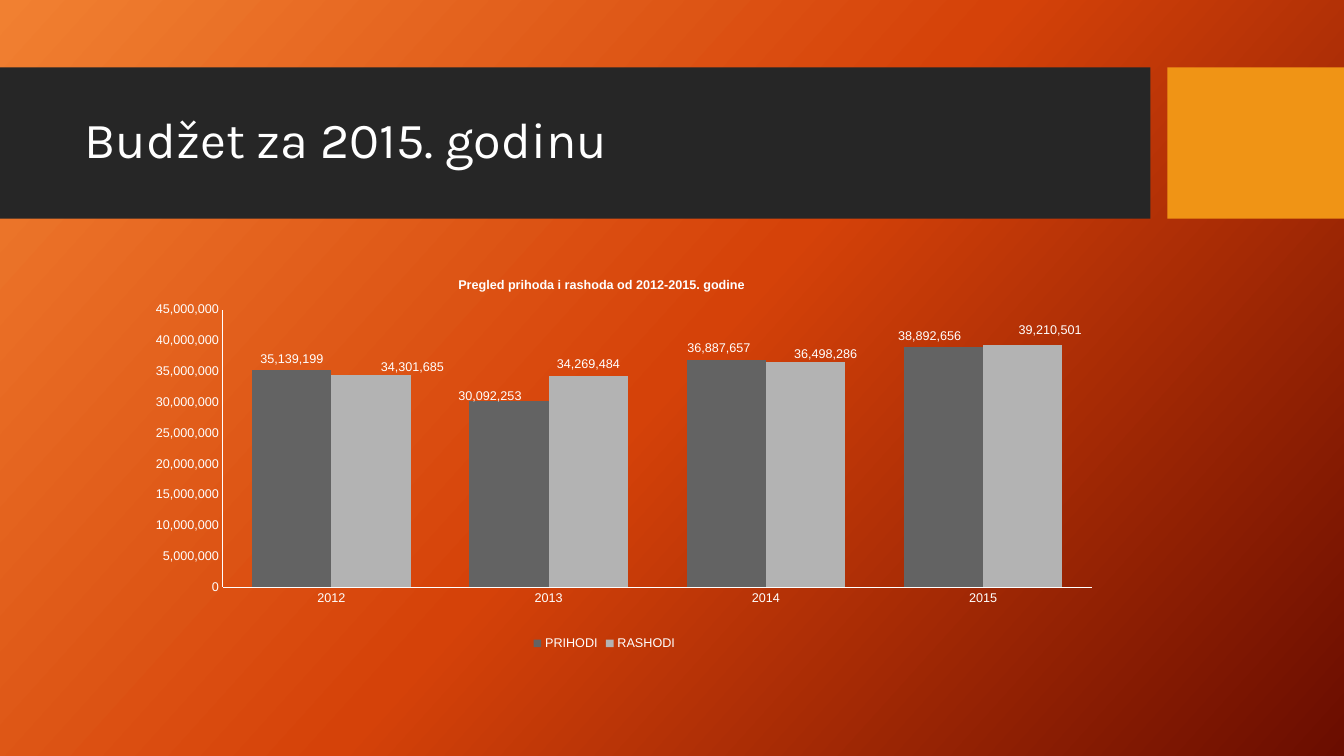
import copy
from dataclasses import dataclass

import pptx
import pptx.chart.data
import pptx.dml.color
import pptx.enum.chart
import pptx.enum.shapes
import pptx.enum.text
import pptx.oxml
import pptx.oxml.ns
import pptx.util
from pptx.util import Cm


@dataclass(frozen=True)
class Theme:
    band: str = "262626"
    accent: str = "F09415"
    text: str = "FFFFFF"
    income: str = "636363"
    expenses: str = "B3B3B3"
    backdrop: tuple = ((0, "F18031"), (0.5, "D54209"), (1, "6A0D00"))
    title_font: str = "Karla"
    chart_font: str = "Arial"
    title_size: int = 36
    chart_size: int = 9


THEME = Theme()
YEARS = ("2012", "2013", "2014", "2015")
# Each series: name, colour, values, label shifts by year (% of chart width and height)
BUDGET = (
    ("PRIHODI", THEME.income, (35139199, 30092253, 36887657, 38892656),
     {1: (-1.8, 1.5), 2: (-0.7, 0), 3: (-1.3, 0)}),
    ("RASHODI", THEME.expenses, (34301685, 34269484, 36498286, 39210501),
     {0: (3.9, 0.8), 2: (1.9, 0.8), 3: (2.6, -0.8)}),
)


def rgb(value):
    return pptx.dml.color.RGBColor.from_string(value)


def style_font(font, name, size, bold=False):
    font.name = name
    font.size = pptx.util.Pt(size)
    font.bold = bold
    font.color.rgb = rgb(THEME.text)


def style_chart_font(font, bold=False):
    style_font(font, THEME.chart_font, THEME.chart_size, bold)


def set_layout(parent, index, **settings):
    """Give a chart part a manual layout; settings come in schema order."""
    for old in parent.findall(pptx.oxml.ns.qn("c:layout")):
        parent.remove(old)
    parts = "".join(f'<c:{key} val="{value}"/>' for key, value in settings.items())
    parent.insert(index, pptx.oxml.parse_xml(
        f'<c:layout {pptx.oxml.ns.nsdecls("c")}>'
        f"<c:manualLayout>{parts}</c:manualLayout></c:layout>"))


def paint_background(slide):
    fill = slide.background.fill
    fill.gradient()
    fill.gradient_angle = 360 - 42
    stop_list = slide.element.find(".//" + pptx.oxml.ns.qn("a:gsLst"))
    stop_list.append(copy.deepcopy(stop_list[-1]))
    for stop, (position, color) in zip(fill.gradient_stops, THEME.backdrop):
        stop.position = position
        stop.color.rgb = rgb(color)


def add_header(slide, left, top, width, height):
    # Dark band and accent block, behind the title
    title = slide.shapes.title
    accent_width, gap = Cm(4.45), Cm(0.43)
    band_width = width - accent_width - gap
    for x, block_width, color in ((left, band_width, THEME.band),
                                  (left + width - accent_width, accent_width, THEME.accent)):
        block = slide.shapes.add_shape(pptx.enum.shapes.MSO_SHAPE.RECTANGLE,
                                       x, top, block_width, height)
        block.shadow.inherit = False
        block.fill.solid()
        block.fill.fore_color.rgb = rgb(color)
        block.line.fill.background()
        title.element.addprevious(block.element)

    # Title
    title.left, title.top = left + Cm(1.88), top + Cm(0.38)
    title.width, title.height = Cm(26.7), Cm(3)
    frame = title.text_frame
    frame.word_wrap = True
    frame.auto_size = pptx.enum.text.MSO_AUTO_SIZE.NONE
    frame.vertical_anchor = pptx.enum.text.MSO_ANCHOR.MIDDLE
    heading = frame.paragraphs[0]
    heading.alignment = pptx.enum.text.PP_ALIGN.LEFT
    heading.line_spacing = 0.9
    run = heading.add_run()
    run.text = "Budžet za 2015. godinu"
    style_font(run.font, THEME.title_font, THEME.title_size)


def style_axis(axis):
    axis.has_major_gridlines = False
    axis.major_tick_mark = axis.minor_tick_mark = pptx.enum.chart.XL_TICK_MARK.NONE
    axis.format.line.color.rgb = rgb(THEME.text)
    axis.format.line.width = pptx.util.Pt(0.75)
    style_chart_font(axis.tick_labels.font)


def style_series(series, color, shifts):
    outside = pptx.enum.chart.XL_LABEL_POSITION.OUTSIDE_END
    series.format.fill.solid()
    series.format.fill.fore_color.rgb = rgb(color)
    labels = series.data_labels
    labels.show_value = True
    labels.position = outside
    style_chart_font(labels.font)
    for index, (dx, dy) in shifts.items():
        label = series.points[index].data_label
        style_chart_font(label.font)
        label.position = outside
    label_elements = series.data_labels._element.findall(pptx.oxml.ns.qn("c:dLbl"))
    for element, (dx, dy) in zip(label_elements, shifts.values()):
        set_layout(element, 1, x=dx / 100, y=dy / 100)


def add_budget_chart(slide, left, top, width, height):
    data = pptx.chart.data.CategoryChartData(number_format="#,##0")
    data.categories = YEARS
    for name, _, values, _ in BUDGET:
        data.add_series(name, values)
    chart = slide.shapes.add_chart(pptx.enum.chart.XL_CHART_TYPE.COLUMN_CLUSTERED,
                                   left, top, width, height, data).chart
    style_chart_font(chart.font)

    # Heading and legend
    chart.has_title = True
    run = chart.chart_title.text_frame.paragraphs[0].add_run()
    run.text = "Pregled prihoda i rashoda od 2012-2015. godine"
    style_chart_font(run.font, bold=True)
    set_layout(chart.chart_title.element, 1, xMode="edge", yMode="edge", x=0.36, y=0.04)
    chart.has_legend = True
    chart.legend.position = pptx.enum.chart.XL_LEGEND_POSITION.BOTTOM
    chart.legend.include_in_layout = False
    style_chart_font(chart.legend.font)

    # Axes
    style_axis(chart.category_axis)
    amounts = chart.value_axis
    style_axis(amounts)
    amounts.minimum_scale, amounts.maximum_scale = 0, 45_000_000
    amounts.major_unit = 5_000_000
    amounts.tick_labels.number_format = "#,##0"
    amounts.tick_labels.number_format_is_linked = False

    # Columns
    plot = chart.plots[0]
    plot.gap_width = 74
    plot.overlap = 0
    plot.vary_by_categories = False
    for series, (_, color, _, shifts) in zip(plot.series, BUDGET):
        style_series(series, color, shifts)
    plot_area = chart.element.find(".//" + pptx.oxml.ns.qn("c:plotArea"))
    set_layout(plot_area, 0, layoutTarget="inner", xMode="edge", yMode="edge",
               x=0.14, y=0.13, w=0.82, h=0.7)


def main():
    deck = pptx.Presentation()
    deck.slide_width, deck.slide_height = Cm(33.87), Cm(19.05)
    slide = deck.slides.add_slide(deck.slide_layouts.get_by_name("Title Only"))
    paint_background(slide)
    add_header(slide, 0, Cm(1.7), deck.slide_width, Cm(3.81))
    add_budget_chart(slide, Cm(1.88), Cm(6.5), Cm(26.7), Cm(10))
    deck.save("out.pptx")


if __name__ == "__main__":
    main()
